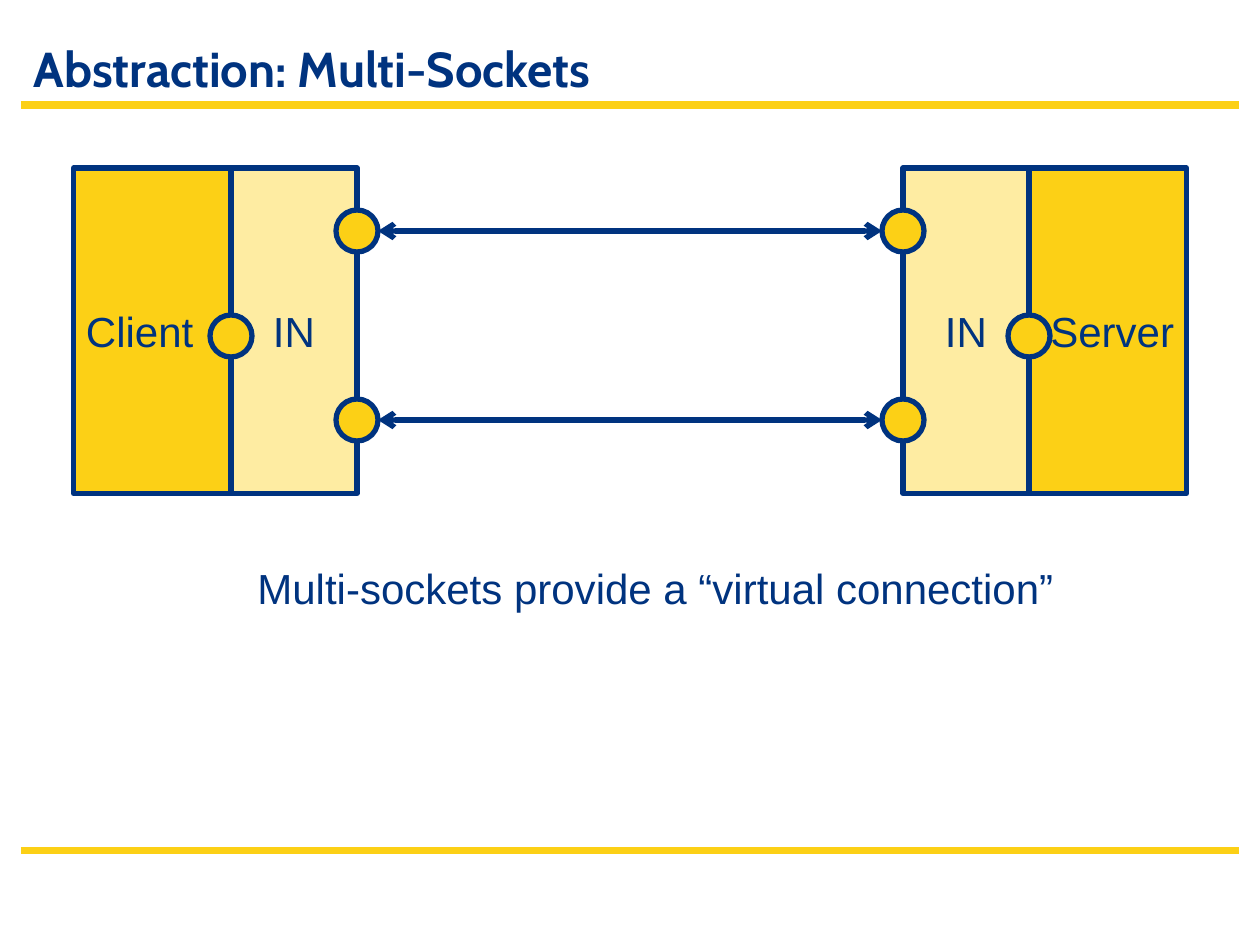
from dataclasses import dataclass

from lxml import etree
from pptx import Presentation
from pptx.dml.color import RGBColor
from pptx.enum.shapes import MSO_CONNECTOR as Connector, MSO_SHAPE as Shape
from pptx.enum.text import MSO_ANCHOR as Anchor, PP_ALIGN as Align
from pptx.oxml.ns import qn
from pptx.util import Pt


@dataclass(frozen=True)
class Theme:
    navy: RGBColor = RGBColor(0x00, 0x33, 0x7F)
    gold: RGBColor = RGBColor(0xFC, 0xD0, 0x16)
    cream: RGBColor = RGBColor(0xFE, 0xEC, 0xA2)
    title_font: str = "Cabin"
    body_font: str = "Arial"
    title_size: int = 28
    body_size: int = 24
    outline: float = 3
    rule: float = 4.5


THEME = Theme()
SOCKET = 24
APP_WIDTH, IN_WIDTH = 90, 72
LINK_OFFSETS = (36, 144)


def set_text(tf, text, align, font=THEME.body_font, size=THEME.body_size, bold=False):
    p = tf.paragraphs[0]
    p.text = text
    p.alignment = align
    p.font.name = font
    p.font.size = Pt(size)
    p.font.bold = bold
    p.font.color.rgb = THEME.navy


def add_node(s, kind, x, y, w, h, fill):
    sp = s.shapes.add_shape(kind, Pt(x), Pt(y), Pt(w), Pt(h))
    sp.shadow.inherit = False
    sp.fill.solid()
    sp.fill.fore_color.rgb = fill
    sp.line.color.rgb = THEME.navy
    sp.line.width = Pt(THEME.outline)
    return sp


def add_block(s, x, y, w, h, fill, text, align):
    tf = add_node(s, Shape.RECTANGLE, x, y, w, h, fill).text_frame
    tf.vertical_anchor = Anchor.MIDDLE
    set_text(tf, text, align)


def add_socket(s, cx, cy):
    add_node(s, Shape.OVAL, cx - SOCKET / 2, cy - SOCKET / 2, SOCKET, SOCKET, THEME.gold)


def add_line(s, x1, x2, y, color, width, arrows=False):
    line = s.shapes.add_connector(Connector.STRAIGHT, Pt(x1), Pt(y), Pt(x2), Pt(y))
    line.line.color.rgb = color
    line.line.width = Pt(width)
    if arrows:
        ln = line.line._get_or_add_ln()
        for end in ("a:headEnd", "a:tailEnd"):
            etree.SubElement(ln, qn(end), type="arrow")
    etree.SubElement(line._element.spPr, qn("a:effectLst"))


def add_title(s, x, y, w, h, text):
    sp = s.shapes.title
    sp.left, sp.top, sp.width, sp.height = Pt(x), Pt(y), Pt(w), Pt(h)
    sp.text_frame.vertical_anchor = Anchor.MIDDLE
    set_text(sp.text_frame, text, Align.LEFT, THEME.title_font, THEME.title_size, True)


def add_host(s, x, y, h, name, align, mirrored=False):
    app_x, in_x = (x + IN_WIDTH, x) if mirrored else (x, x + APP_WIDTH)
    inner = max(app_x, in_x)
    outer = x if mirrored else x + APP_WIDTH + IN_WIDTH
    add_block(s, in_x, y, IN_WIDTH, h, THEME.cream, "IN", Align.CENTER)
    add_block(s, app_x, y, APP_WIDTH, h, THEME.gold, name, align)
    add_socket(s, inner, y + 96)
    for offset in LINK_OFFSETS:
        add_socket(s, outer, y + offset)


def add_diagram(s, x, y, w, h):
    host_width = APP_WIDTH + IN_WIDTH
    add_host(s, x, y, h, "Client", Align.LEFT)
    add_host(s, x + w - host_width, y, h, "Server", Align.RIGHT, mirrored=True)
    start = x + host_width + SOCKET / 2
    end = x + w - host_width - SOCKET / 2
    for offset in LINK_OFFSETS:
        add_line(s, start, end, y + offset, THEME.navy, THEME.outline, arrows=True)


def add_caption(s, x, y, w, h, text):
    tf = s.shapes.add_textbox(Pt(x), Pt(y), Pt(w), Pt(h)).text_frame
    tf.word_wrap = False
    set_text(tf, text, Align.CENTER)


def main():
    prs = Presentation()
    prs.slide_width, prs.slide_height = Pt(720), Pt(540)
    s = prs.slides.add_slide(prs.slide_layouts[5])
    for y in (60, 486):
        add_line(s, 12, 708, y, THEME.gold, THEME.rule)
    add_title(s, 12, 18, 612, 42, "Abstraction: Multi-Sockets")
    add_diagram(s, 42, 96, 636, 186)
    add_caption(s, 137.5, 318, 474, 36, "Multi-sockets provide a “virtual connection”")
    prs.save("out.pptx")


if __name__ == "__main__":
    main()
